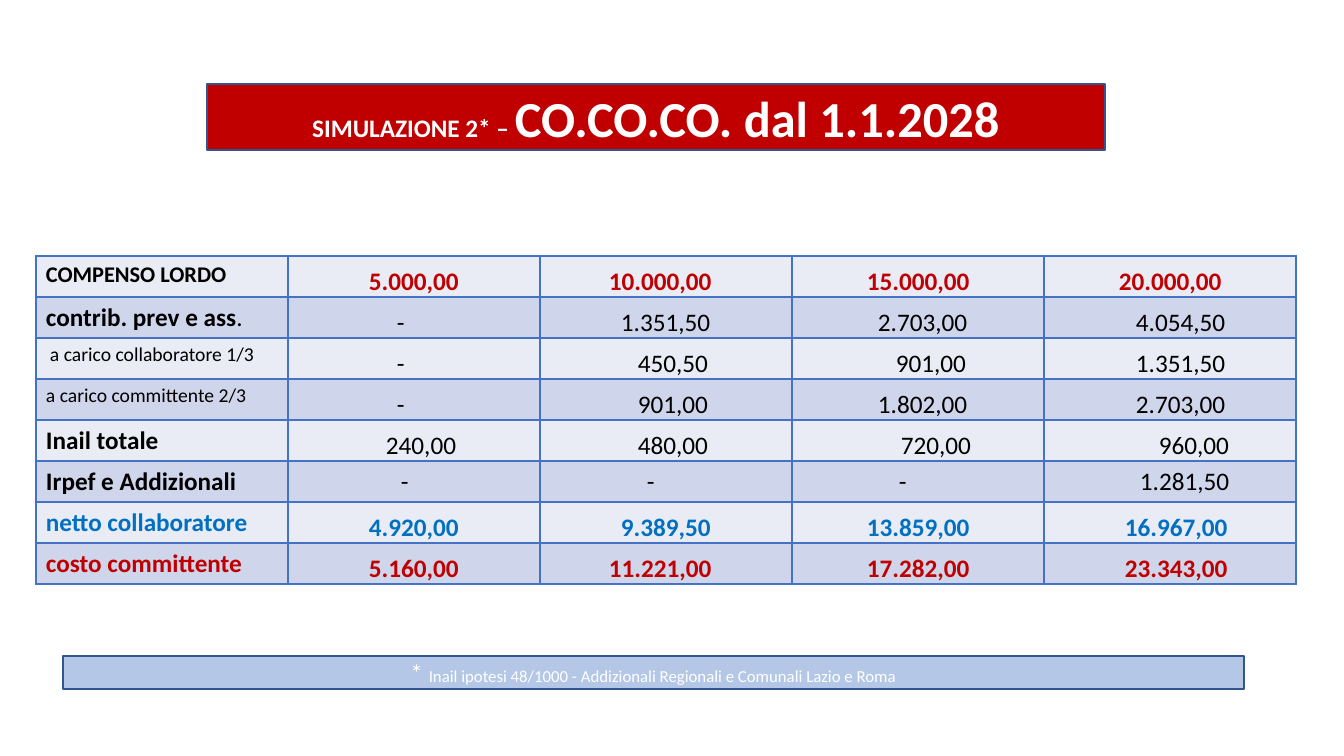
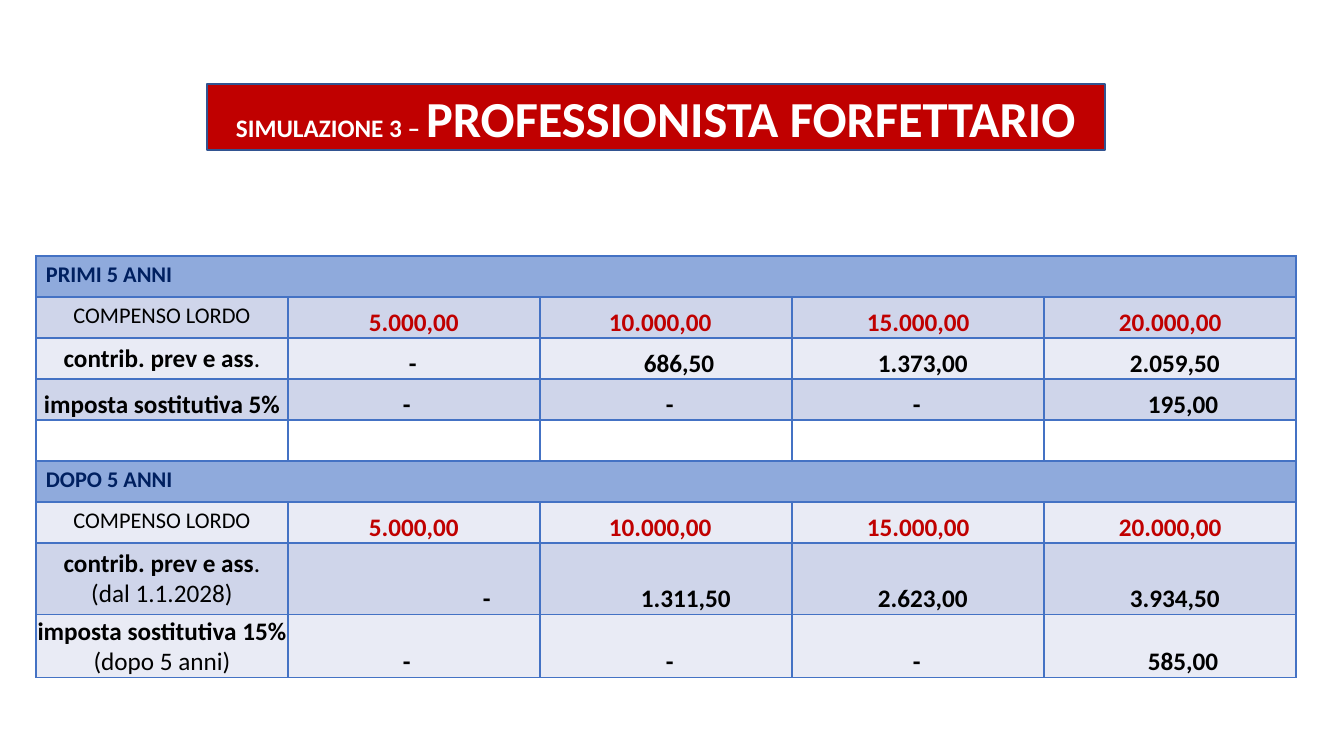
from dataclasses import dataclass
from lxml.etree import SubElement
from pptx import Presentation
from pptx.dml.color import RGBColor as RGB
from pptx.enum.shapes import MSO_SHAPE as Shape
from pptx.enum.text import MSO_ANCHOR as Anchor, MSO_AUTO_SIZE as Auto, PP_ALIGN as Align
from pptx.oxml.ns import qn
from pptx.util import Emu, Pt

FONT = "Calibri"
WHITE, BLACK = RGB(255, 255, 255), RGB(0, 0, 0)
RED, BLUE, NAVY = RGB(0xC0, 0, 0), RGB(0, 0x70, 0xC0), RGB(0, 0x20, 0x60)
LIGHT, DARK, BAND = RGB(0xE9, 0xEB, 0xF5), RGB(0xCF, 0xD5, 0xEA), RGB(0x8F, 0xAA, 0xDC)
PALE, EDGE, RULE = RGB(0xB4, 0xC7, 0xE7), RGB(0x32, 0x54, 0x91), RGB(0x44, 0x72, 0xC4)
COL, ROW = 252, 41
TITLE = (207, 84, 898, 66)
NOTE = (63, 656, 1181, 33)
TABLE = (36, 256)


@dataclass
class Head:
    """Label cell: lines of (text, size, bold) runs."""
    lines: list
    ink: RGB = BLACK
    mid: bool = False
    low: bool = False
    pad: int = 10


@dataclass
class Row:
    """Table row: label, amounts and their left insets."""
    head: Head = None
    nums: str = ""
    pads: tuple = ()
    ink: RGB = BLACK
    bold: bool = False
    low: bool = True
    tall: int = ROW
    paint: RGB = None
    span: bool = False


def px(n):
    """Turn px into EMU."""
    return Emu(round(n * 914400 / 100.8))


def label(text, size=18, bold=True, **more):
    """Make a label of one run."""
    return Head([[(text, size, bold)]], **more)


def gross(head):
    """Make the row of gross fees."""
    return Row(head, "5.000,00 10.000,00 15.000,00 20.000,00", (81, 69, 75, 75), RED, True)


def band(text):
    """Make a full-width heading row."""
    return Row(label(text, 16, ink=NAVY), paint=BAND, span=True)


def say(para, runs, ink, align):
    """Write formatted runs into a paragraph."""
    para.alignment = align
    for text, size, bold in runs:
        run = para.add_run()
        run.text = text
        font = run.font
        font.name, font.size, font.bold = FONT, Pt(size), bold
        font.color.rgb = ink


def box(shape, area, fill, runs):
    """Place and style a bar with centred white text."""
    shape.left, shape.top, shape.width, shape.height = map(px, area)
    shape.fill.solid()
    shape.fill.fore_color.rgb = fill
    shape.line.color.rgb = EDGE
    shape.line.width = Pt(1)
    frame = shape.text_frame
    frame.word_wrap, frame.auto_size = True, Auto.NONE
    frame.vertical_anchor = Anchor.MIDDLE
    say(frame.paragraphs[0], runs, WHITE, Align.CENTER)


def banner(slide, area, small, large):
    """Format the slide title as a red bar."""
    box(slide.shapes.title, area, RED, [(small + " – ", 18, True), (large, 36, True)])


def note(slide, area, text):
    """Add the footnote bar."""
    bar = slide.shapes.add_shape(Shape.RECTANGLE, *map(px, area))
    bar.shadow.inherit = False
    box(bar, area, PALE, [("* ", 18, False), (text, 12, False)])


def frame(cell, paint):
    """Draw the borders and fill of a cell."""
    props = cell._tc.get_or_add_tcPr()
    for side in ("lnL", "lnR", "lnT", "lnB"):
        line = SubElement(props, qn("a:" + side), w=str(Pt(1)))
        solid = SubElement(line, qn("a:solidFill"))
        SubElement(solid, qn("a:srgbClr"), val=str(RULE))
    cell.fill.solid()
    cell.fill.fore_color.rgb = paint


def put(cell, item):
    """Write a label or amount into a cell."""
    cell.margin_left = px(item.pad)
    if item.low:
        cell.vertical_anchor = Anchor.BOTTOM
        cell.margin_left = px(item.pad if item.pad != 10 else 1)
        cell.margin_right = cell.margin_top = px(1)
        cell.margin_bottom = 0
    text = cell.text_frame
    for i, runs in enumerate(item.lines):
        para = text.add_paragraph() if i else text.paragraphs[0]
        say(para, runs, item.ink, Align.CENTER if item.mid else Align.LEFT)


def grid(slide, spot, rows):
    """Add a table with banded rows."""
    size = (5 * COL, sum(row.tall for row in rows))
    table = slide.shapes.add_table(len(rows), 5, *map(px, spot + size)).table
    table.first_row = table.horz_banding = False
    for col in table.columns:
        col.width = px(COL)
    for r, row in enumerate(rows):
        table.rows[r].height = px(row.tall)
        cells = [table.cell(r, c) for c in range(5)]
        for cell in cells:
            frame(cell, row.paint or (LIGHT, DARK)[r % 2])
        if row.span:
            cells[0].merge(cells[-1])
        if row.head:
            put(cells[0], row.head)
        for cell, num, pad in zip(cells[1:], row.nums.split(), row.pads):
            put(cell, label(num, bold=row.bold, ink=row.ink, low=row.low, pad=pad))


def main():
    """Build both slides."""
    deck = Presentation()
    deck.slide_width, deck.slide_height = px(1344), px(756)
    dues = [("contrib. prev e ass", 18, True), (".", 18, False)]
    fee = label("COMPENSO LORDO", 16, False, mid=True)
    late = [dues[0], (". (dal 1.1.2028)", 18, False)]
    tax = [[("imposta sostitutiva 15%", 18, True)], [("(dopo 5 anni)", 18, False)]]

    slide = deck.slides.add_slide(deck.slide_layouts[5])
    banner(slide, TITLE, "SIMULAZIONE 2*", "CO.CO.CO. dal 1.1.2028")
    grid(slide, TABLE, [
        gross(label("COMPENSO LORDO", 16)),
        Row(Head([dues]), "- 1.351,50 2.703,00 4.054,50", (109, 81, 86, 92)),
        Row(label("a carico collaboratore 1/3", 14, False, pad=14),
            "- 450,50 901,00 1.351,50", (109, 98, 104, 92)),
        Row(label("a carico committente 2/3", 14, False),
            "- 901,00 1.802,00 2.703,00", (109, 98, 86, 92)),
        Row(label("Inail totale"), "240,00 480,00 720,00 960,00", (98, 98, 109, 115)),
        Row(label("Irpef e Addizionali"), "- - - 1.281,50", (113, 107, 107, 96), low=False),
        Row(label("netto collaboratore", ink=BLUE),
            "4.920,00 9.389,50 13.859,00 16.967,00", (81, 81, 75, 81), BLUE, True),
        Row(label("costo committente", ink=RED),
            "5.160,00 11.221,00 17.282,00 23.343,00", (81, 69, 75, 81), RED, True),
    ])
    note(slide, NOTE, "Inail ipotesi 48/1000 - Addizionali Regionali e Comunali Lazio e Roma")

    slide = deck.slides.add_slide(deck.slide_layouts[5])
    banner(slide, TITLE, "SIMULAZIONE 3", "PROFESSIONISTA FORFETTARIO")
    grid(slide, TABLE, [
        band("PRIMI 5 ANNI"),
        gross(fee),
        Row(Head([dues], mid=True), "- 686,50 1.373,00 2.059,50",
            (121, 104, 86, 86), bold=True),
        Row(label("imposta sostitutiva 5%", mid=True, low=True),
            "- - - 195,00", (115, 126, 121, 104), bold=True),
        Row(paint=WHITE),
        band("DOPO 5 ANNI"),
        gross(fee),
        Row(Head([late], mid=True), "- 1.311,50 2.623,00 3.934,50",
            (195, 101, 86, 86), bold=True, tall=71),
        Row(Head(tax, mid=True, low=True), "- - - 585,00",
            (115, 126, 121, 104), bold=True, tall=63),
    ])
    deck.save("out.pptx")


if __name__ == "__main__":
    main()
